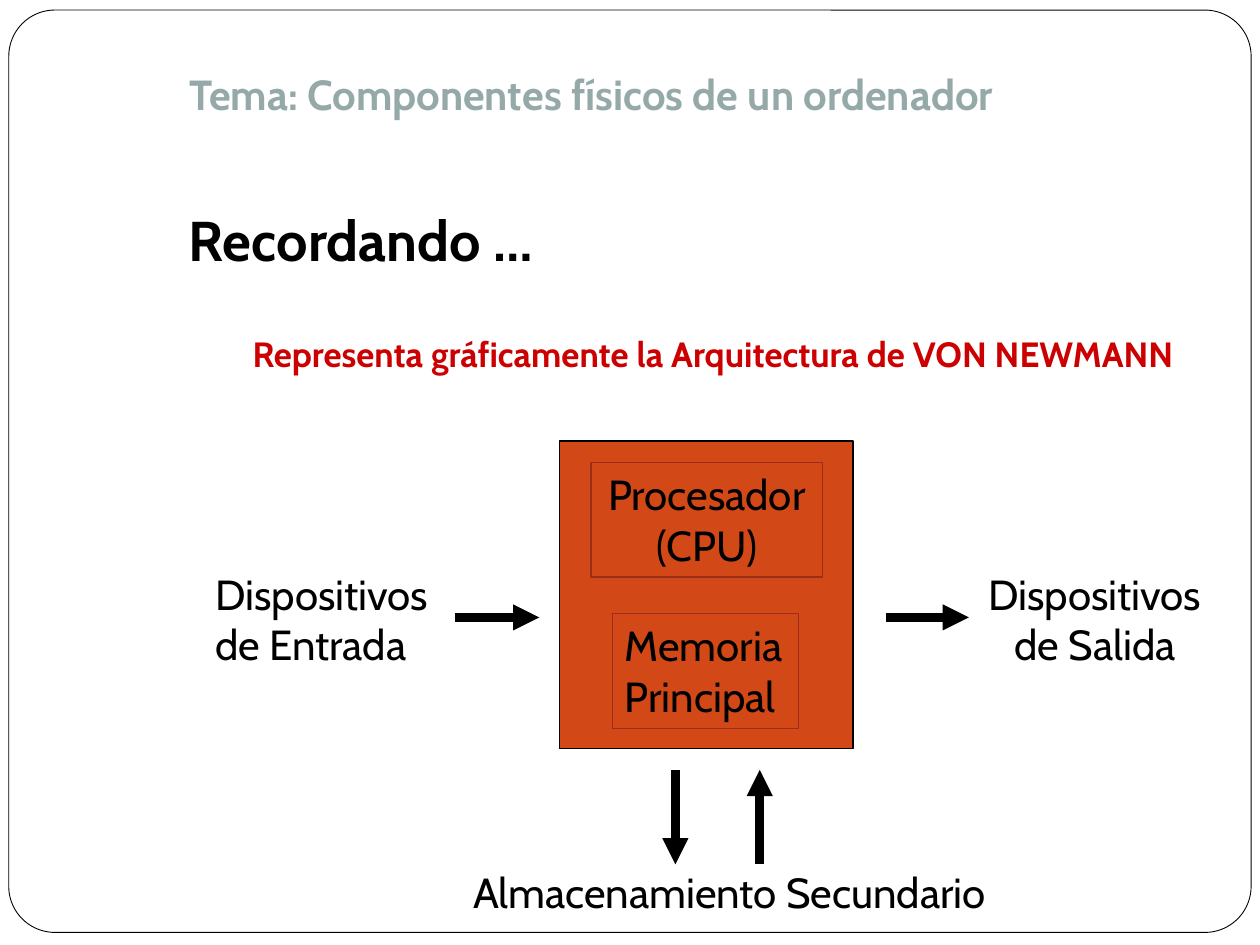
from dataclasses import dataclass

import lxml.etree
import pptx
import pptx.dml.color
import pptx.enum.shapes
import pptx.enum.text
import pptx.oxml.ns
import pptx.util

Align = pptx.enum.text.PP_ALIGN
Preset = pptx.enum.shapes.MSO_SHAPE


@dataclass(frozen=True)
class Theme:
    font: str = "Cabin"
    ink: str = "000000"
    heading: str = "96A9A9"
    accent: str = "CC0000"
    computer: str = "D34817"
    unit_border: str = "9B2D1F"
    body_size: int = 24
    prompt_size: int = 20
    section_size: int = 32
    frame_line: float = 0.5
    box_line: float = 0.75
    arrow_line: float = 5


class SlideBuilder:
    columns = 100
    rows = 75

    def __init__(self, deck, theme):
        self.deck = deck
        self.theme = theme
        self.slide = deck.slides.add_slide(deck.slide_layouts[5])

    def x(self, column):
        return round(self.deck.slide_width * column / self.columns)

    def y(self, row):
        return round(self.deck.slide_height * row / self.rows)

    def area(self, left, top, width, height):
        return self.x(left), self.y(top), self.x(width), self.y(height)

    def color(self, value):
        return pptx.dml.color.RGBColor.from_string(value)

    def fill_text(self, holder, lines, align, size=None, color=None, bold=False, wrap=True):
        frame = holder.text_frame
        frame.text = "\n".join(lines)
        frame.word_wrap = wrap
        frame.auto_size = pptx.enum.text.MSO_AUTO_SIZE.NONE
        frame.vertical_anchor = pptx.enum.text.MSO_ANCHOR.TOP
        for paragraph in frame.paragraphs:
            paragraph.alignment = align
            paragraph.font.name = self.theme.font
            paragraph.font.size = pptx.util.Pt(size or self.theme.body_size)
            paragraph.font.bold = bold
            paragraph.font.color.rgb = self.color(color or self.theme.ink)

    def title(self, area, text, **style):
        heading = self.slide.shapes.title
        heading.left, heading.top, heading.width, heading.height = self.area(*area)
        self.fill_text(heading, [text], Align.LEFT, **style)

    def text(self, area, lines, align=Align.LEFT, **style):
        label = self.slide.shapes.add_textbox(*self.area(*area))
        self.fill_text(label, lines, align, **style)

    def box(self, area, border, width, fill=None, preset=Preset.RECTANGLE):
        box = self.slide.shapes.add_shape(preset, *self.area(*area))
        box.shadow.inherit = False
        box.line.color.rgb = self.color(border)
        box.line.width = pptx.util.Pt(width)
        if fill:
            box.fill.solid()
            box.fill.fore_color.rgb = self.color(fill)
        else:
            box.fill.background()
        return box

    def unit(self, area, lines, align):
        unit = self.box(area, self.theme.unit_border, self.theme.box_line)
        self.fill_text(unit, lines, align, wrap=False)

    def arrow(self, start, end):
        arrow = self.slide.shapes.add_connector(
            pptx.enum.shapes.MSO_CONNECTOR.STRAIGHT,
            self.x(start[0]), self.y(start[1]), self.x(end[0]), self.y(end[1]),
        )
        arrow.line.color.rgb = self.color(self.theme.ink)
        arrow.line.width = pptx.util.Pt(self.theme.arrow_line)
        qn = pptx.oxml.ns.qn
        properties = arrow.element.find(qn("p:spPr"))
        line = properties.find(qn("a:ln"))
        lxml.etree.SubElement(line, qn("a:tailEnd"), type="triangle")
        lxml.etree.SubElement(properties, qn("a:effectLst"))


def main():
    theme = Theme()
    deck = pptx.Presentation()
    deck.slide_width = pptx.util.Inches(10)
    deck.slide_height = pptx.util.Inches(7.5)
    page = SlideBuilder(deck, theme)

    frame = page.box((0.7, 0.8, 98.6, 73.2), theme.ink, theme.frame_line,
                     preset=Preset.ROUNDED_RECTANGLE)
    frame.adjustments[0] = 0.05
    page.title((14, 4.9, 76.5, 5), "Tema: Componentes físicos de un ordenador",
               color=theme.heading, bold=True, wrap=False)
    page.text((14, 15.8, 84.3, 6.3), ["Recordando …"],
              size=theme.section_size, bold=True)
    page.text((13.2, 25.9, 86.8, 4.3),
              ["Representa gráficamente la Arquitectura de VON NEWMANN"], Align.CENTER,
              size=theme.prompt_size, color=theme.accent, bold=True)

    page.box((44.4, 35, 23.3, 24.4), theme.ink, theme.box_line, fill=theme.computer)
    page.unit((46.9, 36.7, 18.4, 9.1), ["Procesador", "(CPU)"], Align.CENTER)
    page.unit((48.6, 48.7, 14.8, 9.1), ["Memoria", "Principal"], Align.LEFT)

    page.text((16.1, 44.6, 19.3, 9), ["Dispositivos", "de Entrada"], wrap=False)
    page.text((76.9, 44.6, 20, 9), ["Dispositivos de Salida"], Align.CENTER)
    page.text((36.1, 68.3, 43.6, 5), ["Almacenamiento Secundario"], Align.CENTER,
              wrap=False)

    bus_row, store_top, store_bottom = 49, 61.1, 68.6
    page.arrow((36.1, bus_row), (42.8, bus_row))
    page.arrow((70.3, bus_row), (76.9, bus_row))
    page.arrow((60.3, store_bottom), (60.3, store_top))
    page.arrow((53.6, store_top), (53.6, store_bottom))

    deck.save("out.pptx")


if __name__ == "__main__":
    main()
